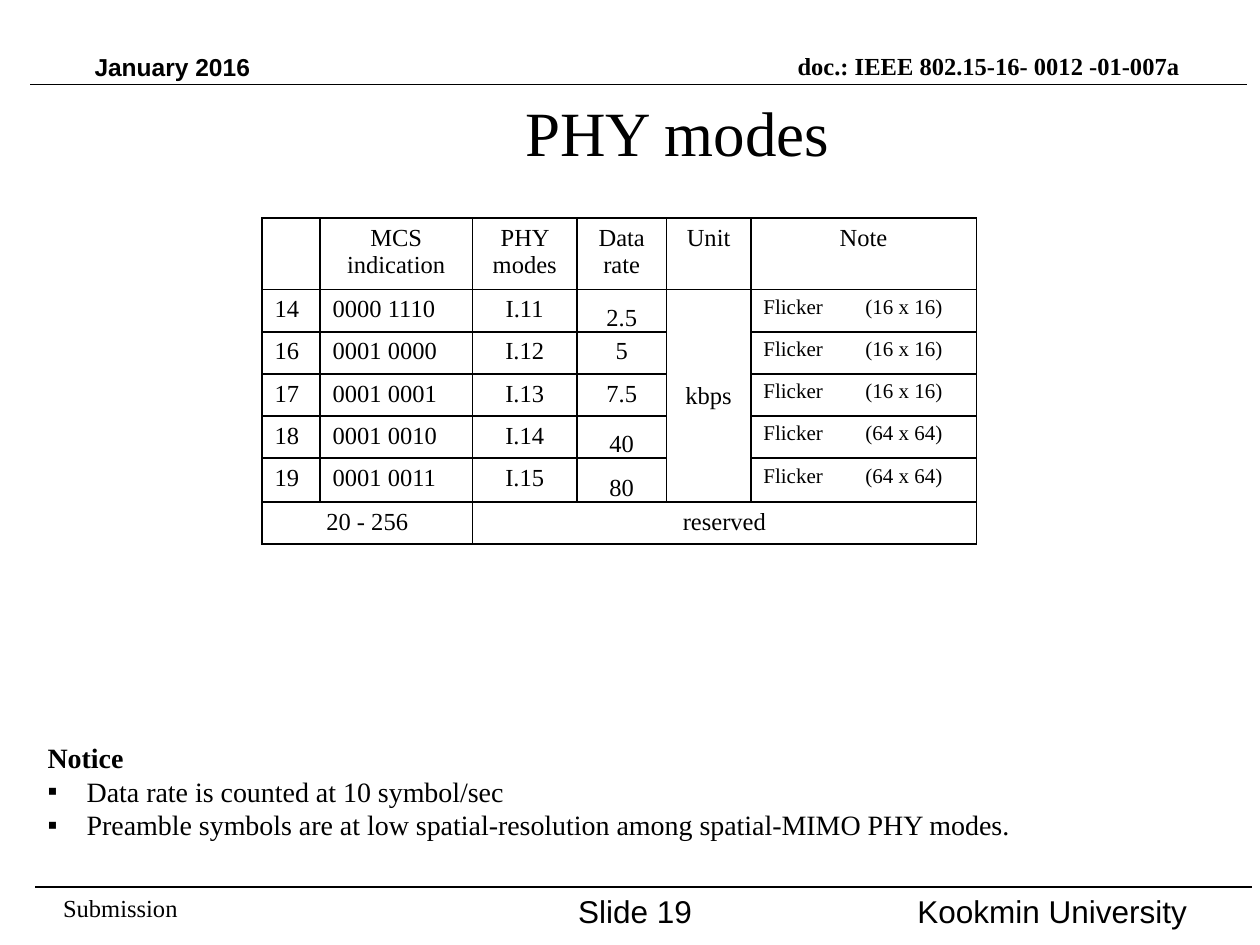
from lxml import etree
from pptx import Presentation
from pptx.dml.color import RGBColor
from pptx.enum import text as tx
from pptx.oxml.ns import qn
from pptx.util import Inches, Pt

THEME = dict(ink=RGBColor(0, 0, 0), serif="Times New Roman", sans="Arial",
             title=36, foot=18, note=16, body=14, small=12, line=1)
LEFT, MID, RIGHT = tx.PP_ALIGN.LEFT, tx.PP_ALIGN.CENTER, tx.PP_ALIGN.RIGHT
TOP, CENTER, LOW = (tx.MSO_ANCHOR.TOP, tx.MSO_ANCHOR.MIDDLE,
                    tx.MSO_ANCHOR.BOTTOM)

TITLE = "PHY modes", (4.07, 0.69, 2.64, 0.71)
# words, box, font, size, bold, alignment, anchor
LABELS = [
    ("January 2016", (0.75, 0.41, 1.75, 0.24), "sans", "body", True, LEFT, LOW),
    ("doc.: IEEE 802.15-16- 0012 -01-007a", (6.33, 0.4, 3.42, 0.24),
     "serif", "body", True, LEFT, LOW),
    ("Submission", (0.5, 7.08, 1.75, 0.24), "serif", "body", False, LEFT, LOW),
    ("Slide 19", (4.44, 7.08, 1.2, 0.2), "sans", "foot", False, MID, TOP),
    ("Kookmin University", (6, 7.08, 3.42, 0.2), "sans", "foot", False, RIGHT, TOP),
]
RULES = [(0.24, 0.67), (0.28, 7.04)]
RULE_LEN = 9.66

HEAD = ["", "MCS indication", "PHY modes", "Data rate", "Unit", "Note"]
MODES = [
    ("14", "0000 1110", "I.11", "2.5", "16 x 16"),
    ("16", "0001 0000", "I.12", "5", "16 x 16"),
    ("17", "0001 0001", "I.13", "7.5", "16 x 16"),
    ("18", "0001 0010", "I.14", "40", "64 x 64"),
    ("19", "0001 0011", "I.15", "80", "64 x 64"),
]
UNIT = "kbps"
REST = ["20 - 256", "", "reserved", "", "", ""]
LOW_RATES = {"2.5", "40", "80"}
GRID_AT = 2.08, 1.73
COLS = [0.46, 1.21, 0.83, 0.71, 0.67, 1.79]
ROWS = [0.57] + [0.33] * 4 + [0.35, 0.33]
NOTE_TAB = 0.81

NOTICE = "Notice"
POINTS = [
    "Data rate is counted at 10 symbol/sec",
    "Preamble symbols are at low spatial-resolution among spatial-MIMO PHY modes.",
]
NOTICE_BOX = 0.28, 5.83, 9.26, 0.91
INDENT = 0.31


def style(para, size, font="serif", bold=False, align=LEFT):
    para.alignment = align
    para.font.name, para.font.size = THEME[font], Pt(THEME[size])
    para.font.bold, para.font.color.rgb = bold, THEME["ink"]


def add_label(slide, words, box, font, size, bold, align, anchor):
    frame = slide.shapes.add_textbox(*map(Inches, box)).text_frame
    frame.margin_left = frame.margin_right = 0
    frame.margin_top = frame.margin_bottom = 0
    frame.word_wrap, frame.vertical_anchor = True, anchor
    frame.text = words
    style(frame.paragraphs[0], size, font, bold, align)


def add_rule(slide, left, top):
    line = slide.shapes.add_connector(
        1, Inches(left), Inches(top), Inches(left + RULE_LEN), Inches(top))
    line.line.color.rgb, line.line.width = THEME["ink"], Pt(THEME["line"])
    etree.SubElement(line._element.spPr, qn("a:effectLst"))


def add_borders(cell):
    props = cell._tc.get_or_add_tcPr()
    for side in ("lnL", "lnR", "lnT", "lnB"):
        edge = etree.SubElement(props, qn("a:" + side), w=str(Pt(THEME["line"])))
        fill = etree.SubElement(edge, qn("a:solidFill"))
        etree.SubElement(fill, qn("a:srgbClr"), val=str(THEME["ink"]))


def add_tab(para, stop):
    tabs = etree.SubElement(para._p.get_or_add_pPr(), qn("a:tabLst"))
    etree.SubElement(tabs, qn("a:tab"), pos=str(Inches(stop)), algn="l")


def add_bullet(para):
    props = para._p.get_or_add_pPr()
    props.set("marL", str(Inches(INDENT)))
    props.set("indent", str(-Inches(INDENT)))
    props.insert(0, props.makeelement(qn("a:buFont"), {"typeface": THEME["sans"]}))
    props.insert(1, props.makeelement(qn("a:buChar"), {"char": "▪"}))


def fill_cell(cell, words, row, col):
    add_borders(cell)
    cell.fill.background()
    cell.text = words
    para = cell.text_frame.paragraphs[0]
    mode = 0 < row <= len(MODES)
    note = mode and col == 5
    if note:
        add_tab(para, NOTE_TAB)
    style(para, "small" if note else "body",
          align=LEFT if mode and col in (0, 1, 5) else MID)
    if mode and col == 3 and words in LOW_RATES:
        cell.vertical_anchor = LOW
        cell.margin_left = cell.margin_right = cell.margin_top = Inches(0.01)
        cell.margin_bottom = 0


def add_grid(slide):
    body = [[num, code, mode, rate, "" if i else UNIT, f"Flicker\t({size})"]
            for i, (num, code, mode, rate, size) in enumerate(MODES)]
    cells = [HEAD] + body + [REST]
    size = Inches(sum(COLS)), Inches(sum(ROWS))
    grid = slide.shapes.add_table(
        len(ROWS), len(COLS), *map(Inches, GRID_AT), *size).table
    grid.first_row = grid.horz_banding = False
    for col, width in zip(grid.columns, COLS):
        col.width = Inches(width)
    for r, height in enumerate(ROWS):
        grid.rows[r].height = Inches(height)
        for c, words in enumerate(cells[r]):
            fill_cell(grid.cell(r, c), words, r, c)
    last = len(ROWS) - 1
    grid.cell(1, 4).merge(grid.cell(last - 1, 4))
    grid.cell(1, 4).vertical_anchor = CENTER
    grid.cell(last, 0).merge(grid.cell(last, 1))
    grid.cell(last, 2).merge(grid.cell(last, 5))


def add_notice(slide):
    frame = slide.shapes.add_textbox(*map(Inches, NOTICE_BOX)).text_frame
    frame.word_wrap = True
    frame.text = NOTICE
    style(frame.paragraphs[0], "note", bold=True)
    for words in POINTS:
        para = frame.add_paragraph()
        para.text = words
        style(para, "note")
        add_bullet(para)


def add_title(slide):
    words, box = TITLE
    title = slide.shapes.title
    title.left, title.top, title.width, title.height = map(Inches, box)
    frame = title.text_frame
    frame.text = words
    frame.word_wrap, frame.vertical_anchor = False, TOP
    frame.auto_size = tx.MSO_AUTO_SIZE.NONE
    style(frame.paragraphs[0], "title")


def main():
    deck = Presentation()
    deck.slide_width, deck.slide_height = Inches(10), Inches(7.5)
    slide = deck.slides.add_slide(deck.slide_layouts[5])
    add_title(slide)
    for label in LABELS:
        add_label(slide, *label)
    for rule in RULES:
        add_rule(slide, *rule)
    add_grid(slide)
    add_notice(slide)
    deck.save("out.pptx")


if __name__ == "__main__":
    main()
